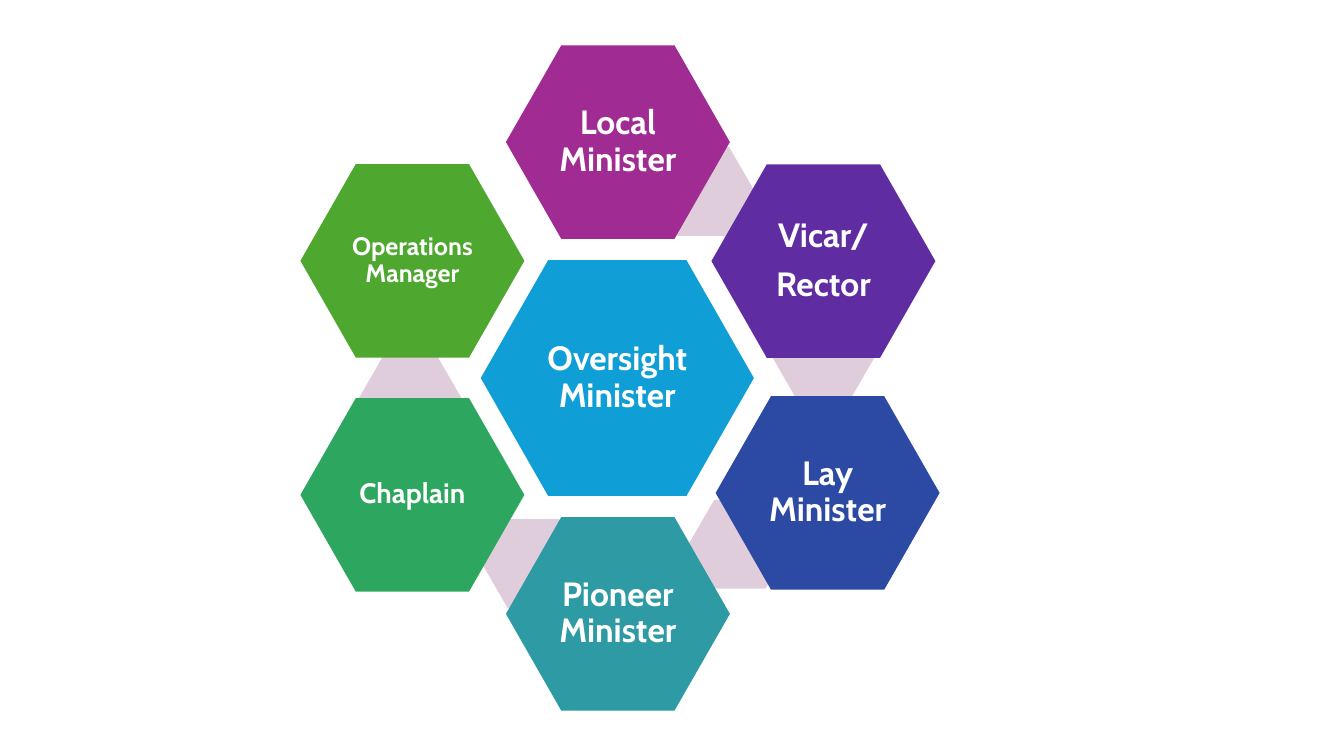
from pptx import Presentation
from pptx.dml.color import RGBColor
from pptx.enum.shapes import MSO_SHAPE
from pptx.enum.text import MSO_ANCHOR, PP_ALIGN
from pptx.util import Pt

COLORS = {
    "white": "FFFFFF",
    "link": "DFCDDC",
    "oversight": "0F9ED5",
    "local": "A02B93",
    "vicar": "5F2CA1",
    "lay": "2C49A3",
    "pioneer": "2D9AA4",
    "chaplain": "2DA65F",
    "operations": "4EA72E",
}
ROLE_SIZE = (160, 138.2)
OVERSIGHT_SIZE = (195.1, 168.5)
LINK_SIZE = (73.4, 63.4)
LEFT, MIDDLE, RIGHT = 214.6, 361.4, 508.2

LINKS = [(465.8, 105.1), (551.5, 223.2), (491.8, 357.1),
         (344.2, 370.8), (256.3, 252.7)]
ROLES = [
    ("local", (MIDDLE, 32.4), ["Local Minister"], 24),
    ("vicar", (RIGHT, 117.4), ["Vicar/", "Rector"], 24),
    ("lay", (511.2, 283), ["Lay Minister"], 24),
    ("pioneer", (MIDDLE, 369.4), ["Pioneer Minister"], 24),
    ("chaplain", (LEFT, 284.4), ["Chaplain"], 20),
    ("operations", (LEFT, 117.2), ["Operations Manager"], 18),
]


def apply_format(target, values):
    for attribute, value in values.items():
        setattr(target, attribute, value)


def add_hexagon(slide, position, size, color, slant):
    hexagon = slide.shapes.add_shape(
        MSO_SHAPE.HEXAGON, *[Pt(length) for length in position + size])
    hexagon.adjustments[0] = slant
    hexagon.shadow.inherit = False
    hexagon.fill.solid()
    hexagon.fill.fore_color.rgb = RGBColor.from_string(COLORS[color])
    hexagon.line.fill.background()
    return hexagon


def add_role(slide, color, position, lines, font_size, size=ROLE_SIZE):
    label = add_hexagon(slide, position, size, color, 0.286).text_frame
    margins = ("margin_left", "margin_top", "margin_right", "margin_bottom")
    apply_format(label, dict.fromkeys(margins, Pt(2.2)))
    apply_format(label, {"word_wrap": True,
                         "vertical_anchor": MSO_ANCHOR.MIDDLE})
    for index, line in enumerate(lines):
        paragraph = label.add_paragraph() if index else label.paragraphs[0]
        apply_format(paragraph, {
            "text": line,
            "alignment": PP_ALIGN.CENTER,
            "line_spacing": 0.9,
            "space_after": Pt(0.35 * font_size),
        })
        font = paragraph.runs[0].font
        apply_format(font, {"name": "Cabin", "size": Pt(font_size),
                            "bold": True})
        font.color.rgb = RGBColor.from_string(COLORS["white"])


def main():
    presentation = Presentation()
    apply_format(presentation, {"slide_width": Pt(960),
                                "slide_height": Pt(540)})
    slide = presentation.slides.add_slide(presentation.slide_layouts[6])
    for position in LINKS:
        add_hexagon(slide, position, LINK_SIZE, "link", 0.289)
    add_role(slide, "oversight", (343.4, 185.8), ["Oversight Minister"], 24,
             OVERSIGHT_SIZE)
    for role in ROLES:
        add_role(slide, *role)
    presentation.save("out.pptx")


if __name__ == "__main__":
    main()
